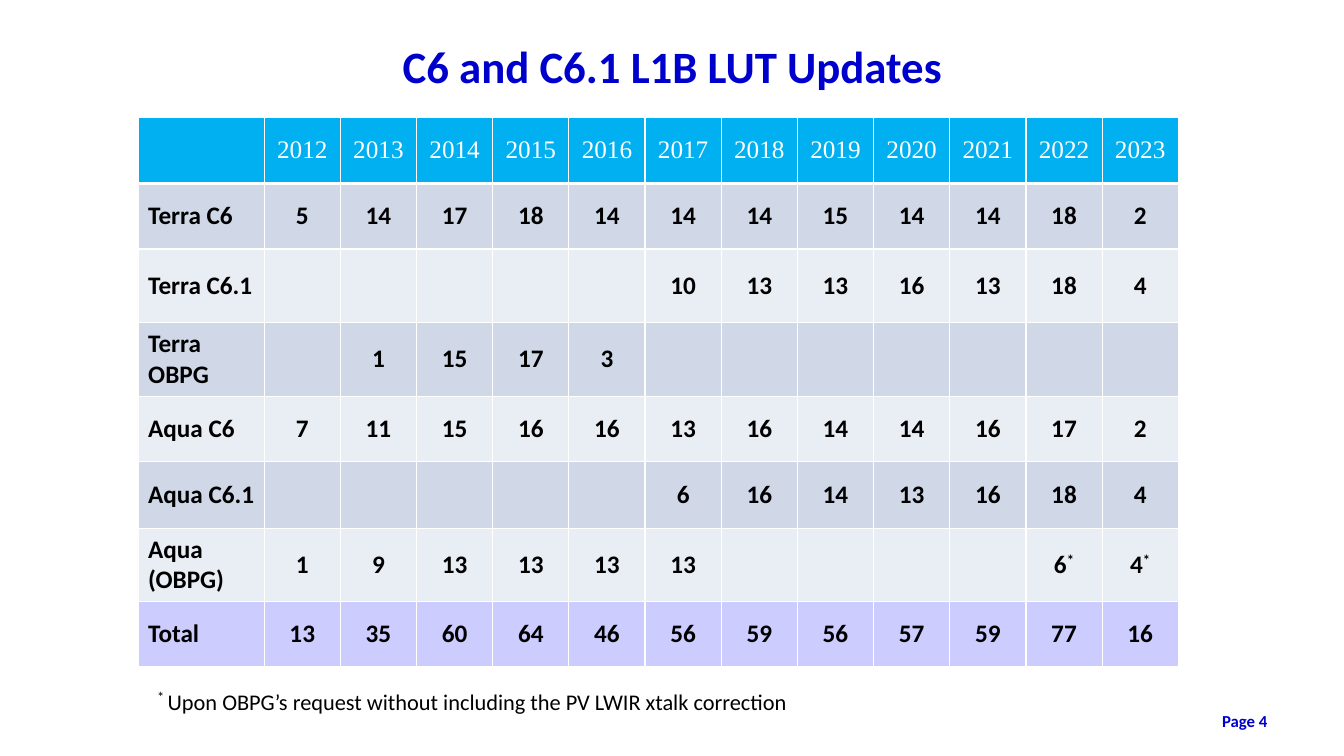
from dataclasses import dataclass

from lxml.etree import SubElement
from pptx import Presentation
from pptx.dml.color import RGBColor
from pptx.enum.text import MSO_ANCHOR, MSO_AUTO_SIZE, PP_ALIGN
from pptx.oxml.ns import qn
from pptx.util import Emu, Pt

PX = 9144  # EMU per px, 100 px to the inch
BLUE = RGBColor(0x00, 0x00, 0xCC)
BLACK = RGBColor(0x00, 0x00, 0x00)
WHITE = RGBColor(0xFF, 0xFF, 0xFF)
SKY = RGBColor(0x00, 0xB0, 0xF0)
BAND_DARK = RGBColor(0xD0, 0xD8, 0xE8)
BAND_LIGHT = RGBColor(0xE9, 0xED, 0xF4)
LILAC = RGBColor(0xCC, 0xCC, 0xFF)


@dataclass
class Row:
    label: str
    values: list
    height: int
    fill: RGBColor
    color: RGBColor = BLACK
    font: str = "Calibri"
    bold: bool = True
    tight: bool = False
    bottom_line: int = 1


ROWS = [
    Row("", list(range(2012, 2024)), 66, SKY, WHITE, "Times New Roman", False,
        bottom_line=3),
    Row("Terra C6", [5, 14, 17, 18, 14, 14, 14, 15, 14, 14, 18, 2], 65, BAND_DARK),
    Row("Terra C6.1", [""] * 5 + [10, 13, 13, 16, 13, 18, 4], 73, BAND_LIGHT),
    Row("Terra OBPG", ["", 1, 15, 17, 3] + [""] * 7, 73, BAND_DARK),
    Row("Aqua C6", [7, 11, 15, 16, 16, 13, 16, 14, 14, 16, 17, 2], 65, BAND_LIGHT),
    Row("Aqua C6.1", [""] * 5 + [6, 16, 14, 13, 16, 18, 4], 66, BAND_DARK, tight=True),
    Row("Aqua (OBPG)", [1, 9, 13, 13, 13, 13] + [""] * 4 + ["6*", "4*"], 73,
        BAND_LIGHT, tight=True),
    Row("Total", [13, 35, 60, 64, 46, 56, 59, 56, 57, 59, 77, 16], 64, LILAC),
]
LABEL_W, TABLE_W = 125, 1032


def box(x: int, y: int, w: int, h: int) -> tuple:
    return tuple(Emu(v * PX) for v in (x, y, w, h))


def set_font(font, name: str, size: int, color: RGBColor, bold: bool) -> None:
    font.name, font.size, font.bold = name, Pt(size), bold
    font.color.rgb = color


def superscript(r) -> None:
    r.font._element.set("baseline", "30000")


def add_borders(cell, bottom: int) -> None:
    tc_pr = cell._tc.get_or_add_tcPr()
    for i, (side, width) in enumerate(zip("LRTB", (1, 1, 1, bottom))):
        ln = SubElement(tc_pr, qn(f"a:ln{side}"), w=str(Pt(width)))
        fill = SubElement(ln, qn("a:solidFill"))
        SubElement(fill, qn("a:srgbClr"), val=str(WHITE))
        tc_pr.insert(i, ln)


def fill_cell(cell, text: str, row: Row, align: PP_ALIGN) -> None:
    cell.fill.solid()
    cell.fill.fore_color.rgb = row.fill
    cell.vertical_anchor = MSO_ANCHOR.MIDDLE
    add_borders(cell, row.bottom_line)
    p = cell.text_frame.paragraphs[0]
    p.alignment = align
    set_font(p.font, row.font, 18, row.color, row.bold)
    number = text.rstrip("*")
    for part in (number, text[len(number):]):
        if part:
            r = p.add_run()
            r.text = part
            set_font(r.font, row.font, 18, row.color, row.bold)
            if part == "*":
                superscript(r)


def add_updates_table(s) -> None:
    n_cols = len(ROWS[0].values) + 1
    height = sum(row.height for row in ROWS)
    table = s.shapes.add_table(len(ROWS), n_cols, *box(137, 116, TABLE_W, height)).table
    for j, col in enumerate(table.columns):
        col.width = Emu((TABLE_W - LABEL_W) * PX // (n_cols - 1) if j else LABEL_W * PX)
    for i, row in enumerate(ROWS):
        table.rows[i].height = Emu(row.height * PX)
        for j, value in enumerate([row.label, *row.values]):
            align = PP_ALIGN.CENTER if j else PP_ALIGN.LEFT
            fill_cell(table.cell(i, j), str(value), row, align)
        if row.tight:
            table.cell(i, 0).margin_right = 0


def main() -> None:
    prs = Presentation()
    prs.slide_width, prs.slide_height = Emu(1333 * PX), Emu(750 * PX)
    s = prs.slides.add_slide(prs.slide_layouts[5])

    # Title
    title = s.shapes.title
    title.left, title.top, title.width, title.height = box(167, 30, 1000, 70)
    tf = title.text_frame
    tf.text = "C6 and C6.1 L1B LUT Updates"
    tf.vertical_anchor = MSO_ANCHOR.MIDDLE
    p = tf.paragraphs[0]
    p.alignment = PP_ALIGN.CENTER
    set_font(p.font, "Calibri", 32, BLUE, True)

    # Table of updates by year
    add_updates_table(s)

    # Footnote
    tf = s.shapes.add_textbox(*box(146, 675, 657, 40)).text_frame
    tf.word_wrap = False
    tf.auto_size = MSO_AUTO_SIZE.SHAPE_TO_FIT_TEXT
    p = tf.paragraphs[0]
    mark, note = p.add_run(), p.add_run()
    mark.text = "* "
    note.text = "Upon OBPG’s request without including the PV LWIR xtalk correction"
    set_font(mark.font, "Calibri", 18, BLACK, False)
    set_font(note.font, "Calibri", 16, BLACK, False)
    superscript(mark)

    # Page number
    tf = s.shapes.add_textbox(*box(956, 695, 311, 40)).text_frame
    tf.word_wrap = True
    tf.vertical_anchor = MSO_ANCHOR.MIDDLE
    p = tf.paragraphs[0]
    p.text = "Page 4"
    p.alignment = PP_ALIGN.RIGHT
    set_font(p.font, "Calibri", 12, BLUE, True)

    prs.save("out.pptx")


if __name__ == "__main__":
    main()
